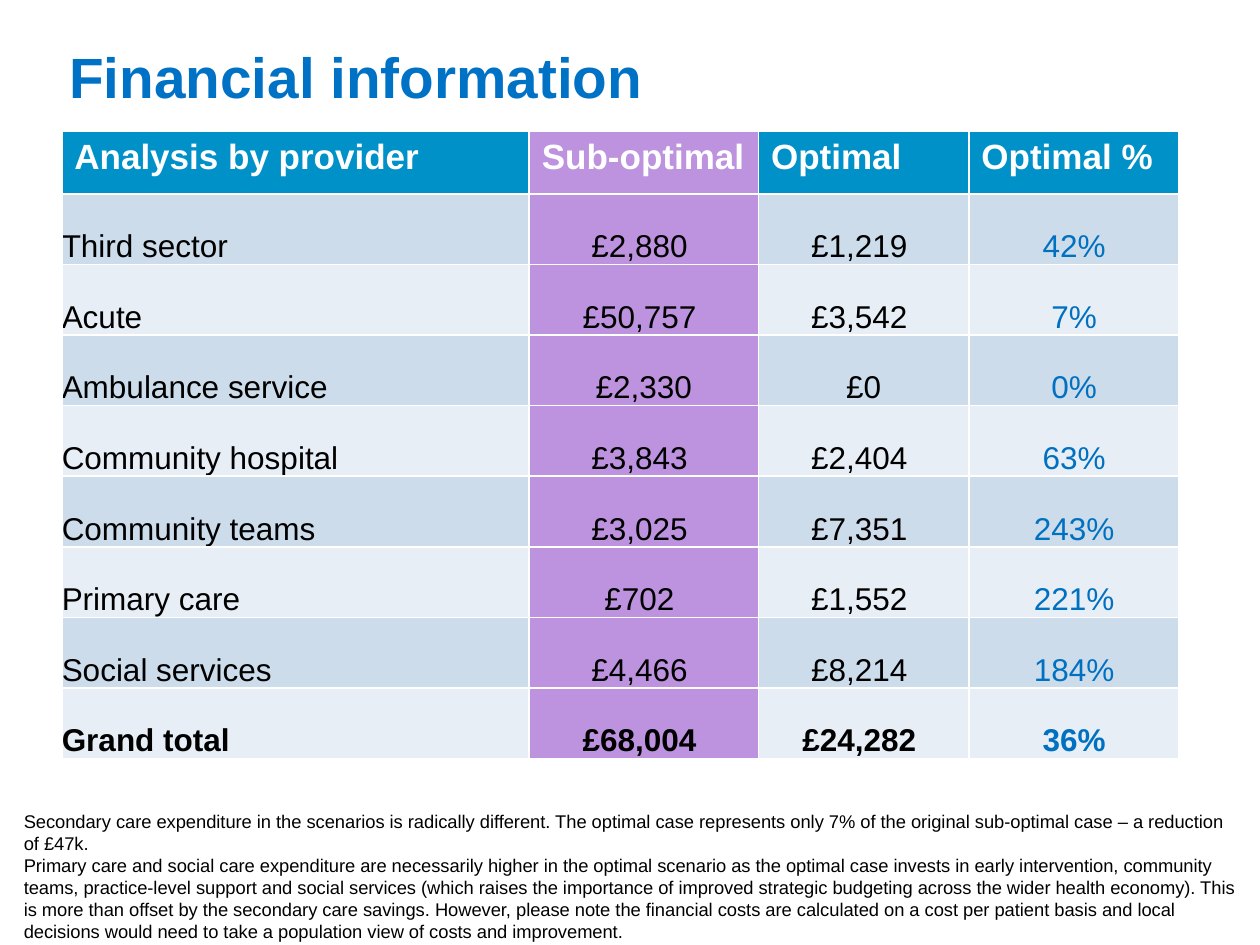
from pptx import Presentation
from pptx.dml.color import RGBColor
from pptx.enum.text import MSO_ANCHOR, MSO_AUTO_SIZE, PP_ALIGN
from pptx.util import Inches, Pt

FONT = "Arial"
BLACK = RGBColor(0x00, 0x00, 0x00)
WHITE = RGBColor(0xFF, 0xFF, 0xFF)
TITLE_BLUE = RGBColor(0x00, 0x72, 0xC6)
PERCENT_BLUE = RGBColor(0x00, 0x70, 0xC0)
HEADER_BLUE = RGBColor(0x00, 0x91, 0xC9)
PURPLE = RGBColor(0xBD, 0x92, 0xDE)
BANDS = (RGBColor(0xE7, 0xEE, 0xF5), RGBColor(0xCC, 0xDC, 0xEB))

TITLE = "Financial information"
ROWS = [
    ("Analysis by provider", "Sub-optimal", "Optimal", "Optimal %"),
    ("Third sector", "£2,880 ", "£1,219 ", "42%"),
    ("Acute", "£50,757 ", "£3,542 ", "7%"),
    ("Ambulance service", "£2,330", "£0", "0%"),
    ("Community hospital", "£3,843 ", "£2,404 ", "63%"),
    ("Community teams", "£3,025 ", "£7,351 ", "243%"),
    ("Primary care", "£702 ", "£1,552 ", "221%"),
    ("Social services", "£4,466 ", "£8,214 ", "184%"),
    ("Grand total", "£68,004 ", "£24,282 ", "36%"),
]
NOTES = [
    "Secondary care expenditure in the scenarios is radically different. "
    "The optimal case represents only 7% of the original sub-optimal case – a reduction of £47k.",
    "Primary care and social care expenditure are necessarily higher in the optimal scenario "
    "as the optimal case invests in early intervention, community teams, practice-level support "
    "and social services (which raises the importance of improved strategic budgeting across "
    "the wider health economy). This is more than offset by the secondary care savings. "
    "However, please note the financial costs are calculated on a cost per patient basis and "
    "local decisions would need to take a population view of costs and improvement.",
]
COLUMN_WIDTHS = (3.71, 1.82, 1.67, 1.67)
HEADER_HEIGHT, ROW_HEIGHT = 0.5, 0.56
SUB_OPTIMAL, PERCENT = 1, 3


def add_text(paragraph, text, size, color, bold=False):
    run = paragraph.add_run()
    run.text = text
    run.font.name = FONT
    run.font.size = Pt(size)
    run.font.bold = bold
    run.font.color.rgb = color


def add_title(slide):
    title = slide.shapes.title
    title.left, title.top = Inches(0.45), Inches(0.33)
    title.width, title.height = Inches(8.05), Inches(0.55)
    frame = title.text_frame
    frame.auto_size = MSO_AUTO_SIZE.NONE
    frame.vertical_anchor = MSO_ANCHOR.MIDDLE
    frame.paragraphs[0].alignment = PP_ALIGN.LEFT
    add_text(frame.paragraphs[0], TITLE, 32.4, TITLE_BLUE, True)


def fill_cell(cell, text, row, column):
    header = row == 0
    background = HEADER_BLUE if header else BANDS[row % 2]
    cell.fill.solid()
    cell.fill.fore_color.rgb = PURPLE if column == SUB_OPTIMAL else background
    paragraph = cell.text_frame.paragraphs[0]
    if header:
        add_text(paragraph, text, 20, WHITE, True)
        return
    cell.vertical_anchor = MSO_ANCHOR.BOTTOM
    cell.margin_left = cell.margin_right = cell.margin_top = cell.margin_bottom = 0
    paragraph.alignment = PP_ALIGN.CENTER if column else PP_ALIGN.LEFT
    color = PERCENT_BLUE if column == PERCENT else BLACK
    add_text(paragraph, text, 18, color, row == len(ROWS) - 1)


def add_provider_table(slide):
    heights = [HEADER_HEIGHT] + [ROW_HEIGHT] * (len(ROWS) - 1)
    table = slide.shapes.add_table(
        len(ROWS), len(COLUMN_WIDTHS), Inches(0.49), Inches(1.04),
        Inches(sum(COLUMN_WIDTHS)), Inches(sum(heights)),
    ).table
    for column, width in zip(table.columns, COLUMN_WIDTHS):
        column.width = Inches(width)
    for row, height in zip(table.rows, heights):
        row.height = Inches(height)
    for row, values in enumerate(ROWS):
        for column, text in enumerate(values):
            fill_cell(table.cell(row, column), text, row, column)


def add_notes_text(slide):
    box = slide.shapes.add_textbox(Inches(0.09), Inches(6.38), Inches(9.85), Inches(1.16))
    frame = box.text_frame
    frame.word_wrap = True
    frame.auto_size = MSO_AUTO_SIZE.SHAPE_TO_FIT_TEXT
    for index, text in enumerate(NOTES):
        paragraph = frame.add_paragraph() if index else frame.paragraphs[0]
        add_text(paragraph, text, 10.5, BLACK)


def main():
    presentation = Presentation()
    presentation.slide_width, presentation.slide_height = Inches(10), Inches(7.5)
    slide = presentation.slides.add_slide(presentation.slide_layouts.get_by_name("Title Only"))
    add_title(slide)
    add_provider_table(slide)
    add_notes_text(slide)
    presentation.save("out.pptx")


if __name__ == "__main__":
    main()
